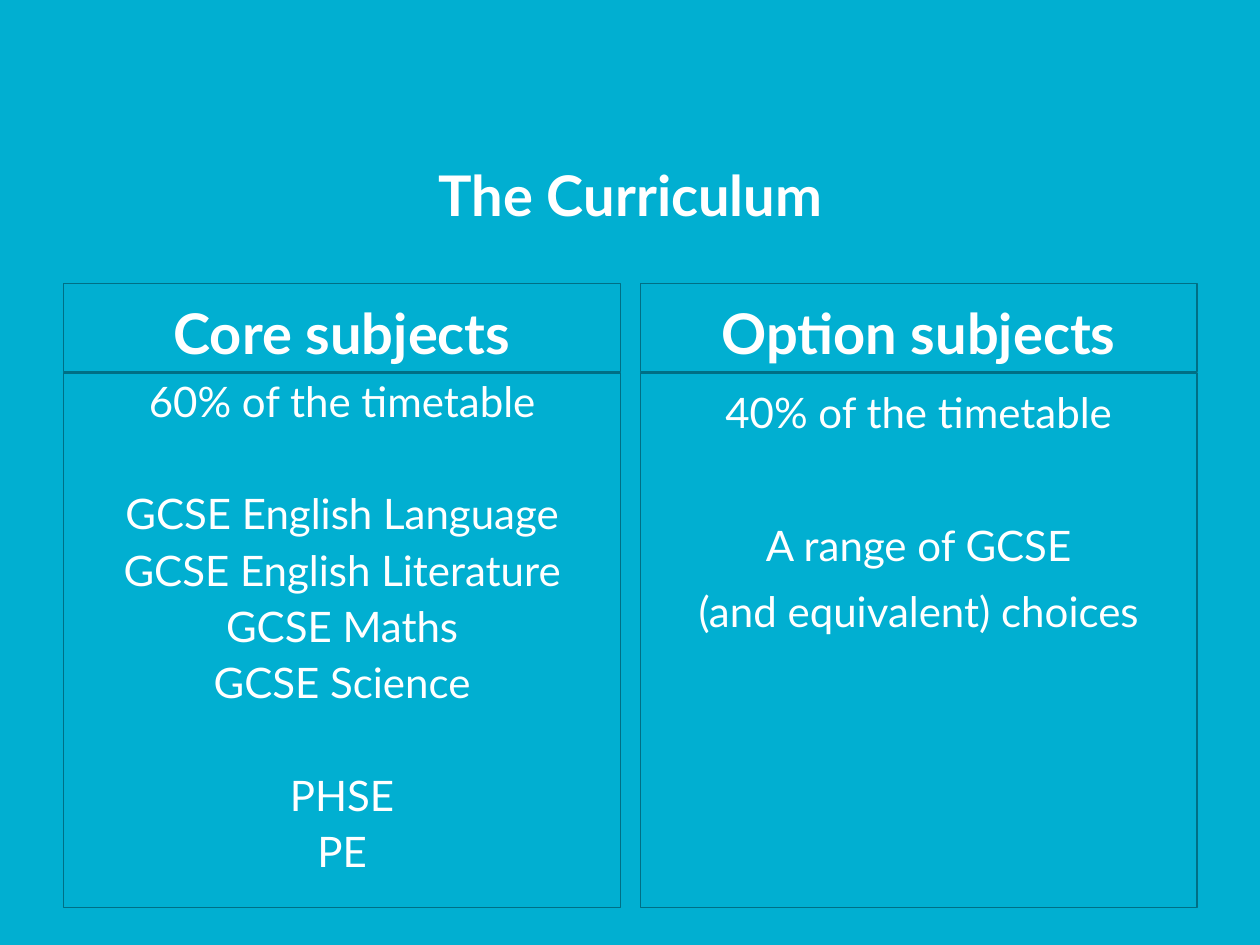
import pptx
import pptx.util
from pptx.dml.color import RGBColor
from pptx.enum.shapes import MSO_SHAPE
from pptx.enum.text import MSO_ANCHOR, PP_ALIGN

Pt = pptx.util.Pt

TITLE = "The Curriculum"
# Each column: heading, line spacing, then groups of lines set apart by a gap
COLUMNS = [
    ("Core subjects", 0.95, [
        ["60% of the timetable"],
        ["GCSE English Language", "GCSE English Literature",
         "GCSE Maths", "GCSE Science"],
        ["PHSE", "PE"],
    ]),
    ("Option subjects", 1.15, [
        ["40% of the timetable"],
        ["A range of GCSE", "(and equivalent) choices"],
    ]),
]

BACKGROUND = RGBColor(0x01, 0xAF, 0xD1)
BORDER = RGBColor(0x00, 0x6F, 0x85)
WHITE = RGBColor(0xFF, 0xFF, 0xFF)
FONT = "Lato"
HEADING_SIZE, BODY_SIZE = 32, 24
LINE_GAP, END_GAP = 4.8, 12
LINE_HEIGHT = 1.2  # Lato line height relative to its size

LEFT, COLUMN_W, COLUMN_STEP = 36.4, 318.2, 329.4
HEADING_TOP, HEADING_H = 162, 50.4
BODY_TOP, BODY_H = 213.1, 305.7


def style(p, size, bold=False):
    p.alignment = PP_ALIGN.CENTER
    for r in p.runs:
        r.font.name = FONT
        r.font.size = Pt(size)
        r.font.bold = bold
        r.font.color.rgb = WHITE


def add_box(slide, left, top, height, anchor):
    sp = slide.shapes.add_shape(MSO_SHAPE.RECTANGLE, Pt(left), Pt(top),
                                Pt(COLUMN_W), Pt(height))
    sp.shadow.inherit = False
    sp.fill.background()
    sp.line.color.rgb = BORDER
    sp.line.width = Pt(0.75)
    tf = sp.text_frame
    tf.word_wrap = True
    tf.vertical_anchor = anchor
    return tf


def add_heading(slide, left, text):
    tf = add_box(slide, left, HEADING_TOP, HEADING_H, MSO_ANCHOR.BOTTOM)
    tf.text = text
    p = tf.paragraphs[0]
    p.line_spacing = 1.15
    p.space_after = Pt(END_GAP)
    style(p, HEADING_SIZE, bold=True)


def add_body(slide, left, spacing, groups):
    tf = add_box(slide, left, BODY_TOP, BODY_H, MSO_ANCHOR.TOP)
    tf.text = "\n".join(line for group in groups for line in group)
    group_gap = 2 * LINE_GAP + BODY_SIZE * LINE_HEIGHT * spacing
    gaps = [LINE_GAP if i else group_gap
            for group in groups for i in range(len(group))]
    gaps[0] = 0
    for p, gap in zip(tf.paragraphs, gaps):
        p.line_spacing = spacing
        p.space_before = Pt(gap)
        p.space_after = Pt(0)
        style(p, BODY_SIZE)
    tf.paragraphs[-1].space_after = Pt(END_GAP)


def main():
    prs = pptx.Presentation()
    prs.slide_width, prs.slide_height = Pt(720), Pt(540)
    slide = prs.slides.add_slide(prs.slide_layouts[6])
    slide.background.fill.solid()
    slide.background.fill.fore_color.rgb = BACKGROUND

    title = slide.shapes.add_textbox(Pt(LEFT), Pt(85.7), Pt(648), Pt(50.4))
    tf = title.text_frame
    tf.word_wrap = True
    tf.vertical_anchor = MSO_ANCHOR.MIDDLE
    tf.text = TITLE
    style(tf.paragraphs[0], HEADING_SIZE, bold=True)

    for i, (heading, spacing, groups) in enumerate(COLUMNS):
        left = LEFT + i * COLUMN_STEP
        add_heading(slide, left, heading)
        add_body(slide, left, spacing, groups)

    prs.save("out.pptx")


if __name__ == "__main__":
    main()
